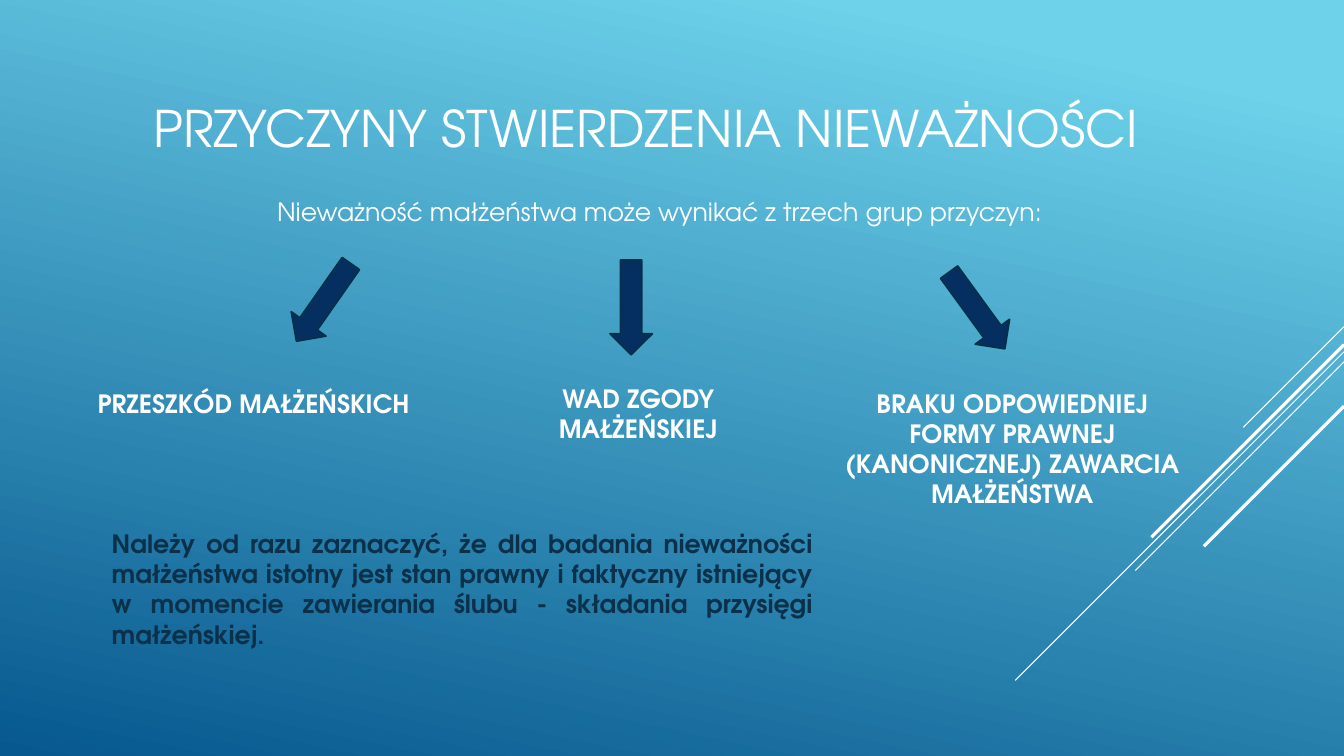
from lxml import etree
from pptx import Presentation
from pptx import util as u
from pptx.dml.color import RGBColor
from pptx.enum import shapes, text
from pptx.oxml import ns

COLORS = {
    "sky": "6ED2EB",
    "deep": "06588E",
    "white": "FFFFFF",
    "arrow": "052F61",
    "outline": "043148",
    "note": "0A304A",
}
FONT = "TeX Gyre Adventor"
WIDTH, HEIGHT = 13.33, 7.5
ALIGN = text.PP_ALIGN


def color(name):
    return RGBColor.from_string(COLORS[name])


def place(shape, box):
    for side, length in zip(("left", "top", "width", "height"), box):
        setattr(shape, side, u.Inches(length))


def write(frame, words, align=ALIGN.LEFT, size=18, bold=False, tint="white"):
    frame.word_wrap = True
    para = frame.paragraphs[0]
    para.alignment = align
    span = para.add_run()
    span.text = words
    style = {"name": FONT, "size": u.Pt(size), "bold": bold}
    for key, value in style.items():
        setattr(span.font, key, value)
    span.font.color.rgb = color(tint)


def paint_background(page):
    fill = page.background.fill
    fill.gradient()
    fill.gradient_angle = 360 - 102
    for stop, (position, name) in zip(fill.gradient_stops, ((0.1, "sky"), (1, "deep"))):
        stop.position = position
        stop.color.rgb = color(name)


def add_diagonals(page, right):
    """Draw 45-degree lines running down and left from the right edge."""
    for top, run, weight in (
        (3.24, 1, 0.75),
        (3.49, 3.26, 0.75),
        (3.59, 2.07, 0.75),
        (3.42, 1.91, 2.25),
        (4.03, 1.39, 2.25),
    ):
        ends = [u.Inches(n) for n in (right, top, right - run, top + run)]
        line = page.shapes.add_connector(shapes.MSO_CONNECTOR.STRAIGHT, *ends)
        line.line.color.rgb = color("white")
        line.line.width = u.Pt(weight)
        etree.SubElement(line._element.spPr, ns.qn("a:effectLst"))


def add_title(page, words, box):
    title = page.shapes.title
    place(title, box)
    title.text_frame.vertical_anchor = text.MSO_ANCHOR.MIDDLE
    write(title.text_frame, words, size=36)


def add_text(page, words, box, **style):
    label = page.shapes.add_textbox(*(u.Inches(n) for n in box))
    write(label.text_frame, words, **style)
    label.text_frame.auto_size = text.MSO_AUTO_SIZE.SHAPE_TO_FIT_TEXT


def add_arrow(page, left, top, rotation):
    arrow = page.shapes.add_shape(
        shapes.MSO_SHAPE.LEFT_ARROW, *(u.Inches(n) for n in (left, top, 0.94, 0.42))
    )
    arrow.rotation = rotation
    arrow.shadow.inherit = False
    arrow.fill.solid()
    arrow.fill.fore_color.rgb = color("arrow")
    arrow.line.color.rgb = color("outline")
    arrow.line.width = u.Pt(1.25)


def add_causes(page):
    """Place each cause under the arrow that leads to it."""
    for words, box, align, arrow in (
        ("PRZESZKÓD MAŁŻEŃSKICH", (0.87, 3.8, 3.39, 0.4), ALIGN.JUSTIFY, (2.74, 2.79, 305)),
        ("WAD ZGODY MAŁŻEŃSKIEJ", (4.83, 3.75, 3, 0.71), ALIGN.CENTER, (5.79, 2.84, 270)),
        (
            "BRAKU ODPOWIEDNIEJ FORMY PRAWNEJ (KANONICZNEJ) ZAWARCIA MAŁŻEŃSTWA",
            (8.17, 3.8, 3.74, 1.31),
            ALIGN.CENTER,
            (9.22, 2.87, 234),
        ),
    ):
        add_text(page, words, box, align=align, bold=True)
        add_arrow(page, *arrow)


def main():
    deck = Presentation()
    deck.slide_width, deck.slide_height = u.Inches(WIDTH), u.Inches(HEIGHT)
    page = deck.slides.add_slide(deck.slide_layouts.get_by_name("Title Only"))
    paint_background(page)
    add_diagonals(page, WIDTH)
    add_title(page, "PRZYCZYNY STWIERDZENIA NIEWAŻNOŚCI", (1.42, 0.44, 10.5, 1.65))
    add_text(
        page,
        "Nieważność małżeństwa może wynikać z trzech grup przyczyn:",
        (2.65, 1.9, 8.05, 0.4),
    )
    add_causes(page)
    add_text(
        page,
        "Należy od razu zaznaczyć, że dla badania nieważności małżeństwa istotny jest "
        "stan prawny i faktyczny istniejący w momencie zawierania ślubu - składania "
        "przysięgi małżeńskiej.",
        (1.01, 5.19, 7.15, 1.31),
        align=ALIGN.JUSTIFY,
        bold=True,
        tint="note",
    )
    deck.save("out.pptx")


if __name__ == "__main__":
    main()
